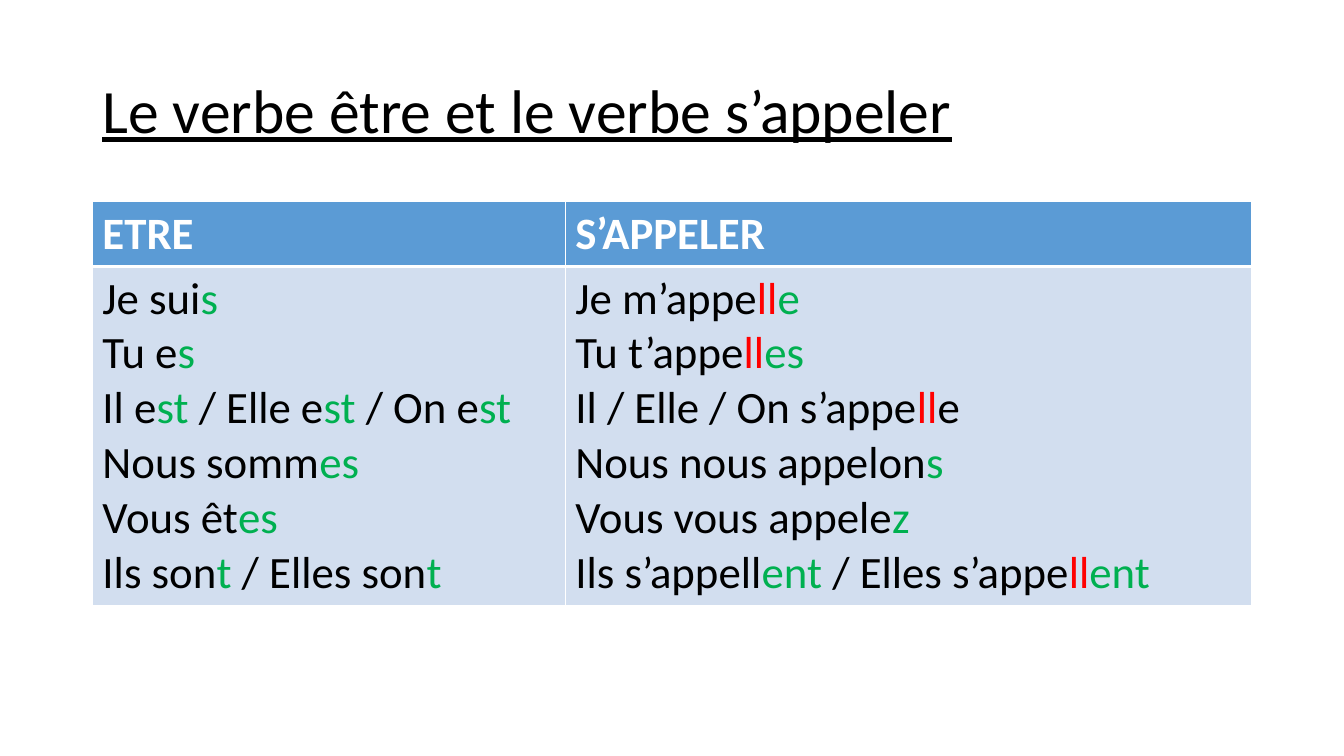
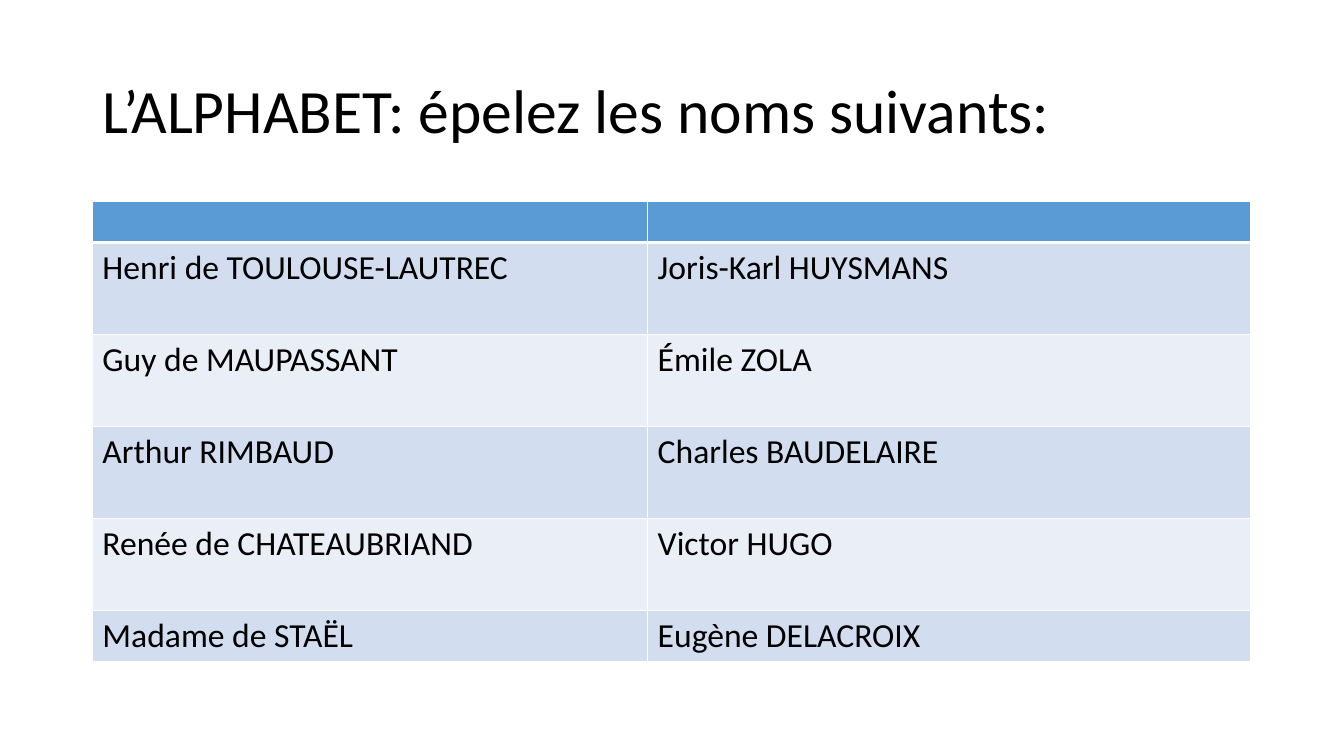
from lxml import etree
from pptx import Presentation
from pptx import util as u
from pptx.dml.color import RGBColor
from pptx.enum import text
from pptx.oxml import ns

COLUMNS, ROWS = 160, 75
LEFT, WIDTH = 11, 138
TITLE_TOP, TITLE_HEIGHT, TABLE_TOP = 4, 14.5, 20

COLORS = {
    "text": "000000", "white": "FFFFFF", "header": "5B9BD5",
    "odd": "D2DEEF", "even": "EAEFF7",
    "ending": "00B050", "double": "FF0000",
}
MARKS = {"+": "ending", "!": "double"}
FONT = "Calibri"
TITLE_SIZE = 44
THIN, THICK = 1, 3

ETRE = [
    "Je sui|+s",
    "Tu e|+s",
    "Il e|+st| / Elle e|+st| / On e|+st",
    "Nous somm|+es",
    "Vous êt|+es",
    "Ils son|+t |/ Elles son|+t",
]
APPELER = [
    "Je m’appe|!ll|+e",
    "Tu t’appe|!ll|+es",
    "Il / Elle / On s’appe|!ll|e",
    "Nous nous appelon|+s",
    "Vous vous appele|+z",
    "Ils s’appell|+ent| / Elles s’appe|!ll|+ent",
]
NAMES = [
    ("Henri de TOULOUSE-LAUTREC", "Joris-Karl HUYSMANS"),
    ("Guy de MAUPASSANT", "Émile ZOLA"),
    ("Arthur RIMBAUD", "Charles BAUDELAIRE"),
    ("Renée de CHATEAUBRIAND", "Victor HUGO"),
    ("Madame de STAËL", "Eugène DELACROIX"),
]


class Deck:
    """Holds the shared style and the slide being built."""

    def __init__(self):
        self.presentation = Presentation()
        self.presentation.slide_width = u.Inches(13.33)
        self.presentation.slide_height = u.Inches(7.5)
        self.slide = None

    def x(self, columns):
        return round(self.presentation.slide_width * columns / COLUMNS)

    def y(self, rows):
        return round(self.presentation.slide_height * rows / ROWS)

    def add_slide(self, title, underline=False):
        layout = self.presentation.slide_layouts.get_by_name("Title Only")
        self.slide = self.presentation.slides.add_slide(layout)
        shape = self.slide.shapes.title
        place = {"left": self.x(LEFT), "top": self.y(TITLE_TOP),
                 "width": self.x(WIDTH), "height": self.y(TITLE_HEIGHT)}
        for name, value in place.items():
            setattr(shape, name, value)
        frame = shape.text_frame
        frame.auto_size = text.MSO_AUTO_SIZE.NONE
        frame.vertical_anchor = text.MSO_ANCHOR.MIDDLE
        paragraph = frame.paragraphs[0]
        paragraph.alignment = text.PP_ALIGN.LEFT
        paragraph.line_spacing = 0.9
        self.add_run(paragraph, title, "text", size=u.Pt(TITLE_SIZE), underline=underline)

    def add_run(self, paragraph, words, color, **formats):
        run = paragraph.add_run()
        run.text = words
        for name, value in {"name": FONT, **formats}.items():
            setattr(run.font, name, value)
        run.font.color.rgb = RGBColor.from_string(COLORS[color])

    def fill_cell(self, cell, lines, color, **formats):
        """Write lines whose parts, split at |, take the colour of their first mark."""
        frame = cell.text_frame
        for number, line in enumerate(lines):
            paragraph = frame.add_paragraph() if number else frame.paragraphs[0]
            for part in filter(None, line.split("|")):
                mark = MARKS.get(part[0])
                self.add_run(paragraph, part[1:] if mark else part, mark or color, **formats)

    def add_borders(self, cell, top, bottom):
        properties = cell._tc.get_or_add_tcPr()
        for side, points in zip("LRTB", (THIN, THIN, top, bottom)):
            line = etree.SubElement(properties, ns.qn(f"a:ln{side}"), w=str(u.Pt(points)))
            fill = etree.SubElement(line, ns.qn("a:solidFill"))
            etree.SubElement(fill, ns.qn("a:srgbClr"), val=COLORS["white"])

    def add_table(self, rows, widths, heights, size):
        """Add a table from rows of cells, each cell being a list of lines."""
        table = self.slide.shapes.add_table(
            len(rows), len(widths), self.x(LEFT), self.y(TABLE_TOP),
            self.x(sum(widths)), self.y(sum(heights))).table
        for column, width in zip(table.columns, widths):
            column.width = self.x(width)
        for index, (cells, height) in enumerate(zip(rows, heights)):
            table.rows[index].height = self.y(height)
            header = index == 0
            background = "header" if header else "odd" if index % 2 else "even"
            for cell, lines in zip(table.rows[index].cells, cells):
                self.add_borders(cell, THICK if index == 1 else THIN,
                                 THICK if header else THIN)
                cell.fill.solid()
                cell.fill.fore_color.rgb = RGBColor.from_string(COLORS[background])
                self.fill_cell(cell, lines, "white" if header else "text",
                               size=u.Pt(size), bold=header)


def main():
    deck = Deck()

    deck.add_slide("Le verbe être et le verbe s’appeler", underline=True)
    deck.add_table([(["ETRE"], ["S’APPELER"]), (ETRE, APPELER)],
                   widths=(56.3, 81.7), heights=(6.4, 33.5), size=32)

    deck.add_slide("L’ALPHABET: épelez les noms suivants:")
    names = [([left], [right]) for left, right in NAMES]
    deck.add_table([([], [])] + names,
                   widths=(66.1, 71.8), heights=[4] + [9.12] * 4 + [5], size=24)

    deck.presentation.save("out.pptx")


if __name__ == "__main__":
    main()
